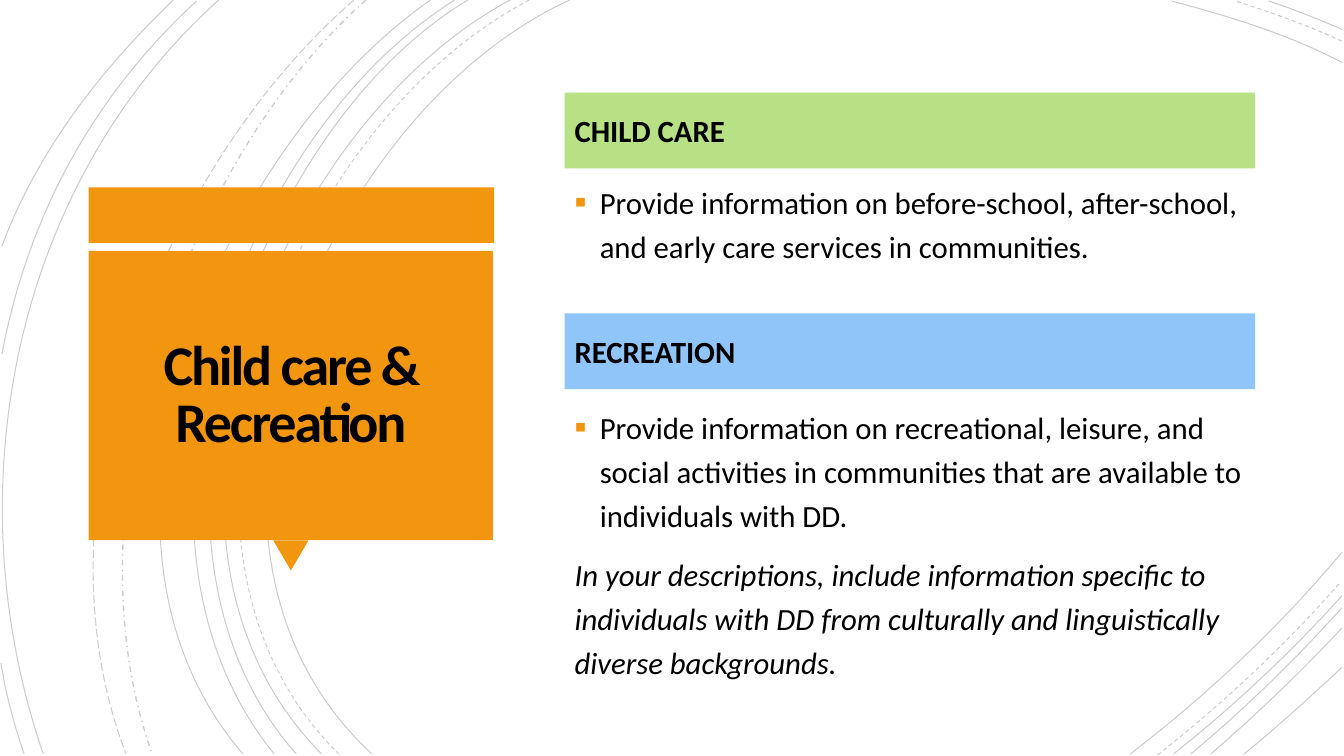
from dataclasses import dataclass
from lxml.etree import SubElement
from pptx import Presentation
from pptx.dml.color import RGBColor
from pptx.enum.dml import MSO_LINE
from pptx.enum.shapes import MSO_SHAPE
from pptx.enum.text import MSO_ANCHOR, MSO_AUTO_SIZE, PP_ALIGN
from pptx.oxml.ns import qn
from pptx.util import Inches, Pt


@dataclass
class Theme:
    font: str = "Calibri"
    ink: str = "000000"
    accent: str = "F3960F"
    green: str = "B8E084"
    blue: str = "8FC5F8"
    title: int = 40
    body: int = 22


theme = Theme()


def add_run(p, text, size, bold=False, italic=False):
    r = p.add_run()
    r.text = text
    f = r.font
    f.name, f.size, f.bold, f.italic = theme.font, Pt(size), bold, italic
    f.color.rgb = RGBColor.from_string(theme.ink)
    return r


def add_block(s, kind, x, y, w, h, color):
    sp = s.shapes.add_shape(kind, Inches(x), Inches(y), Inches(w), Inches(h))
    sp.shadow.inherit = False
    sp.fill.solid()
    sp.fill.fore_color.rgb = RGBColor.from_string(color)
    sp.line.fill.background()
    return sp


prs = Presentation()
prs.slide_width, prs.slide_height = Inches(13.33), Inches(7.5)
s = prs.slides.add_slide(prs.slide_layouts[5])

SOLID, DASH = MSO_LINE.SOLID, MSO_LINE.DASH
arcs = [
    (SOLID, (5.65, 0), (3.15, 1.15), (1.43, 5.4), (3.69, 7.48)),
    (SOLID, (13.31, 0.62), (12.78, 0.34), (12.18, 0.16), (11.62, 0.01)),
    (SOLID, (11.21, 7.48), (11.97, 6.9), (12.69, 6.22), (13.31, 5.48)),
    (DASH, (5.25, 0), (2.85, 1.25), (1.23, 5.37), (3.36, 7.48)),
    (DASH, (13.31, 0.41), (12.97, 0.25), (12.6, 0.12), (12.25, 0.01)),
    (DASH, (11.48, 7.49), (12.13, 6.98), (12.75, 6.4), (13.3, 5.77)),
    (SOLID, (5.06, 0), (2.7, 1.27), (1.1, 5.37), (3.19, 7.48)),
    (SOLID, (13.31, 0.29), (13.07, 0.19), (12.83, 0.09), (12.58, 0.01)),
    (SOLID, (11.64, 7.48), (12.23, 7.01), (12.8, 6.48), (13.31, 5.91)),
    (SOLID, (4.64, 0), (2.44, 1.33), (1.1, 5.41), (2.94, 7.48)),
    (SOLID, (11.81, 7.48), (12.34, 7.04), (12.84, 6.55), (13.31, 6.03)),
    (SOLID, (4.51, 0), (2.31, 1.38), (0.97, 5.33), (2.72, 7.48)),
    (SOLID, (12.01, 7.48), (12.46, 7.09), (12.9, 6.67), (13.31, 6.23)),
    (SOLID, (4.27, 0), (2.17, 1.47), (0.53, 5.29), (2.41, 7.48)),
    (SOLID, (12.34, 7.48), (12.67, 7.21), (12.99, 6.92), (13.31, 6.62)),
    (MSO_LINE.DASH_DOT, (3.63, 0), (1.76, 1.66), (0.65, 5.09), (1.51, 7.48)),
    (MSO_LINE.LONG_DASH, (3.51, 0), (1.57, 1.69), (0.29, 4.99), (1.25, 7.48)),
    (SOLID, (2.17, 0), (0.11, 1.85), (-0.46, 4.9), (0.43, 7.48)),
    (SOLID, (1.95, 0.01), (0.92, 0.96), (0.28, 2.14), (0.02, 3.51)),
    (SOLID, (0.01, 6.58), (0.06, 6.89), (0.14, 7.19), (0.24, 7.48)),
    (SOLID, (1.72, 0), (1, 0.69), (0.37, 1.5), (0.02, 2.44)),
]
for dash, *points in arcs:
    start, *ends = [(Inches(x), Inches(y)) for x, y in points]
    fb = s.shapes.build_freeform(*start)
    fb.add_line_segments(ends, close=False)
    sp = fb.convert_to_shape()
    sp.shadow.inherit = False
    sp.fill.background()
    sp.line.color.rgb = RGBColor.from_string(theme.ink)
    sp.line.width = Pt(1 if dash == MSO_LINE.DASH_DOT else 0.75)
    sp.line.dash_style = dash
    ink = sp._element.spPr.find(qn("a:ln")).find(".//" + qn("a:srgbClr"))
    SubElement(ink, qn("a:alpha"), val="20000")
    segments = list(sp._element.iter(qn("a:lnTo")))
    bezier = SubElement(segments[0].getparent(), qn("a:cubicBezTo"))
    for segment in segments:
        bezier.append(segment[0])
        segment.getparent().remove(segment)

add_block(s, MSO_SHAPE.RECTANGLE, 0.88, 1.86, 4.02, 0.55, theme.accent)
pointer = add_block(s, MSO_SHAPE.ISOSCELES_TRIANGLE, 2.71, 5.36, 0.35, 0.3, theme.accent)
pointer.rotation = 180
add_block(s, MSO_SHAPE.RECTANGLE, 0.88, 2.49, 4.01, 2.87, theme.accent)

title = s.shapes.title
s.shapes._spTree.append(title._element)
title.left, title.top, title.width, title.height = map(Inches, (0.97, 2.59, 3.83, 2.69))
tf = title.text_frame
tf.word_wrap = True
tf.auto_size = MSO_AUTO_SIZE.NONE
tf.vertical_anchor = MSO_ANCHOR.MIDDLE
tf.margin_left = tf.margin_right = tf.margin_top = tf.margin_bottom = Inches(0.1)
p = tf.paragraphs[0]
p.alignment = PP_ALIGN.CENTER
p.line_spacing = 0.85
r = add_run(p, "Child care & Recreation", theme.title, bold=True)
r.font._element.set("spc", "-150")

col_x, col_w, head_h = 5.6, 6.85, 0.75
sections = [
    ("CHILD CARE", theme.green, 0.92, 1.7, 1.04, [
        (True, "Provide information on before-school, after-school, "
               "and early care services in communities."),
    ]),
    ("RECREATION", theme.blue, 3.11, 3.93, 1.11, [
        (True, "Provide information on recreational, leisure, and social activities "
               "in communities that are available to individuals with DD."),
        (False, "In your descriptions, include information specific to individuals "
                "with DD from culturally and linguistically diverse backgrounds."),
    ]),
]
for heading, color, head_y, text_y, text_h, paragraphs in sections:
    sp = add_block(s, MSO_SHAPE.RECTANGLE, col_x, head_y, col_w, head_h, color)
    tf = sp.text_frame
    tf.word_wrap = True
    tf.vertical_anchor = MSO_ANCHOR.MIDDLE
    p = tf.paragraphs[0]
    p.alignment = PP_ALIGN.LEFT
    p.space_before = Pt(10)
    add_run(p, heading, theme.body, bold=True)

    box = s.shapes.add_textbox(Inches(col_x), Inches(text_y), Inches(col_w), Inches(text_h))
    tf = box.text_frame
    tf.word_wrap = True
    for i, (bulleted, text) in enumerate(paragraphs):
        p = tf.add_paragraph() if i else tf.paragraphs[0]
        p.line_spacing = 1.2
        p.space_before = Pt(10)
        if bulleted:
            pPr = p._p.get_or_add_pPr()
            pPr.set("marL", str(Inches(0.25)))
            pPr.set("indent", str(-Inches(0.25)))
            SubElement(SubElement(pPr, qn("a:buClr")), qn("a:srgbClr"), val=theme.accent)
            SubElement(pPr, qn("a:buSzPct"), val="110000")
            SubElement(pPr, qn("a:buFont"), typeface=theme.font)
            SubElement(pPr, qn("a:buChar"), char="▪")
        add_run(p, text, theme.body, italic=not bulleted)

prs.save("out.pptx")
